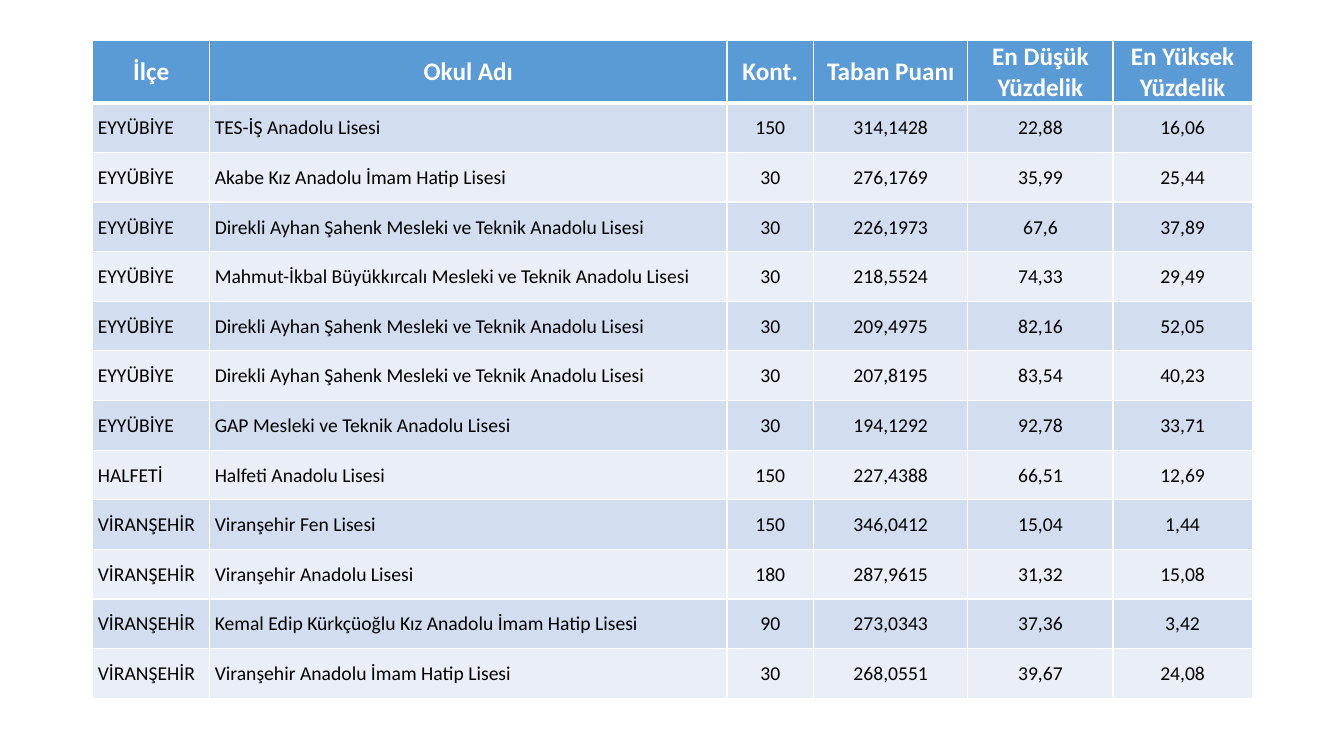
import pptx
import pptx.util
import pptx.dml.color
import pptx.enum.text
import lxml.etree
import pptx.oxml.ns

Inches = pptx.util.Inches
Pt = pptx.util.Pt
RGB = pptx.dml.color.RGBColor.from_string
ALIGN = pptx.enum.text.PP_ALIGN

THEME = {
    "font": "Calibri",
    "header_size": 18,
    "body_size": 14,
    "header_fill": "5B9BD5",
    "bands": ["D2DEEF", "EAEFF7"],
    "header_text": "FFFFFF",
    "body_text": "000000",
    "border": "FFFFFF",
}


def write_cell(cell, text, *, size, color, fill, bold=False, align=ALIGN.CENTER, left=0.01):
    cell.margin_left = Inches(left)
    cell.margin_right = cell.margin_top = Inches(0.01)
    cell.margin_bottom = 0
    cell.vertical_anchor = pptx.enum.text.MSO_ANCHOR.MIDDLE
    cell.fill.solid()
    cell.fill.fore_color.rgb = RGB(fill)
    paragraph = cell.text_frame.paragraphs[0]
    paragraph.alignment = align
    run = paragraph.add_run()
    run.text = text
    run.font.name = THEME["font"]
    run.font.size = Pt(size)
    run.font.bold = bold
    run.font.color.rgb = RGB(color)


def draw_borders(cell, **widths):
    qn = pptx.oxml.ns.qn
    properties = cell._tc.get_or_add_tcPr()
    for side, width in widths.items():
        line = lxml.etree.SubElement(properties, qn(f"a:ln{side}"), w=str(Pt(width)))
        paint = lxml.etree.SubElement(line, qn("a:solidFill"))
        lxml.etree.SubElement(paint, qn("a:srgbClr"), val=THEME["border"])


headings = ["İlçe", "Okul Adı", "Kont.", "Taban Puanı", "En Düşük Yüzdelik", "En Yüksek Yüzdelik"]
schools = [
    ("EYYÜBİYE", "TES-İŞ Anadolu Lisesi", "150", "314,1428", "22,88", "16,06"),
    ("EYYÜBİYE", "Akabe Kız Anadolu İmam Hatip Lisesi", "30", "276,1769", "35,99", "25,44"),
    ("EYYÜBİYE", "Direkli Ayhan Şahenk Mesleki ve Teknik Anadolu Lisesi", "30", "226,1973", "67,6", "37,89"),
    ("EYYÜBİYE", "Mahmut-İkbal Büyükkırcalı Mesleki ve Teknik Anadolu Lisesi", "30", "218,5524", "74,33", "29,49"),
    ("EYYÜBİYE", "Direkli Ayhan Şahenk Mesleki ve Teknik Anadolu Lisesi", "30", "209,4975", "82,16", "52,05"),
    ("EYYÜBİYE", "Direkli Ayhan Şahenk Mesleki ve Teknik Anadolu Lisesi", "30", "207,8195", "83,54", "40,23"),
    ("EYYÜBİYE", "GAP Mesleki ve Teknik Anadolu Lisesi", "30", "194,1292", "92,78", "33,71"),
    ("HALFETİ", "Halfeti Anadolu Lisesi", "150", "227,4388", "66,51", "12,69"),
    ("VİRANŞEHİR", "Viranşehir Fen Lisesi", "150", "346,0412", "15,04", "1,44"),
    ("VİRANŞEHİR", "Viranşehir Anadolu Lisesi", "180", "287,9615", "31,32", "15,08"),
    ("VİRANŞEHİR", "Kemal Edip Kürkçüoğlu Kız Anadolu İmam Hatip Lisesi", "90", "273,0343", "37,36", "3,42"),
    ("VİRANŞEHİR", "Viranşehir Anadolu İmam Hatip Lisesi", "30", "268,0551", "39,67", "24,08"),
]
column_widths = [1.16, 5.13, 0.86, 1.53, 1.44, 1.38]
table_height = 6.52
header_height = 0.61
school_height = (table_height - header_height) / len(schools)

presentation = pptx.Presentation()
presentation.slide_width = Inches(13.33)
presentation.slide_height = Inches(7.5)
slide = presentation.slides.add_slide(presentation.slide_layouts[6])

scores = slide.shapes.add_table(
    len(schools) + 1, len(headings),
    Inches(0.92), Inches(0.4), Inches(sum(column_widths)), Inches(table_height),
).table
for column, width in zip(scores.columns, column_widths):
    column.width = Inches(width)
for row in scores.rows:
    row.height = Inches(school_height)
scores.rows[0].height = Inches(header_height)

for column_index, heading in enumerate(headings):
    cell = scores.cell(0, column_index)
    draw_borders(cell, L=1, R=1, T=1, B=3)
    write_cell(cell, heading, size=THEME["header_size"], color=THEME["header_text"],
               fill=THEME["header_fill"], bold=True)

for school_index, school in enumerate(schools):
    for column_index, value in enumerate(school):
        is_name = column_index < 2
        cell = scores.cell(school_index + 1, column_index)
        draw_borders(cell, L=1, R=1, T=1 if school_index else 3, B=1)
        write_cell(cell, value, size=THEME["body_size"], color=THEME["body_text"],
                   fill=THEME["bands"][school_index % 2],
                   align=ALIGN.LEFT if is_name else ALIGN.CENTER,
                   left=0.05 if is_name else 0.01)

presentation.save("out.pptx")
